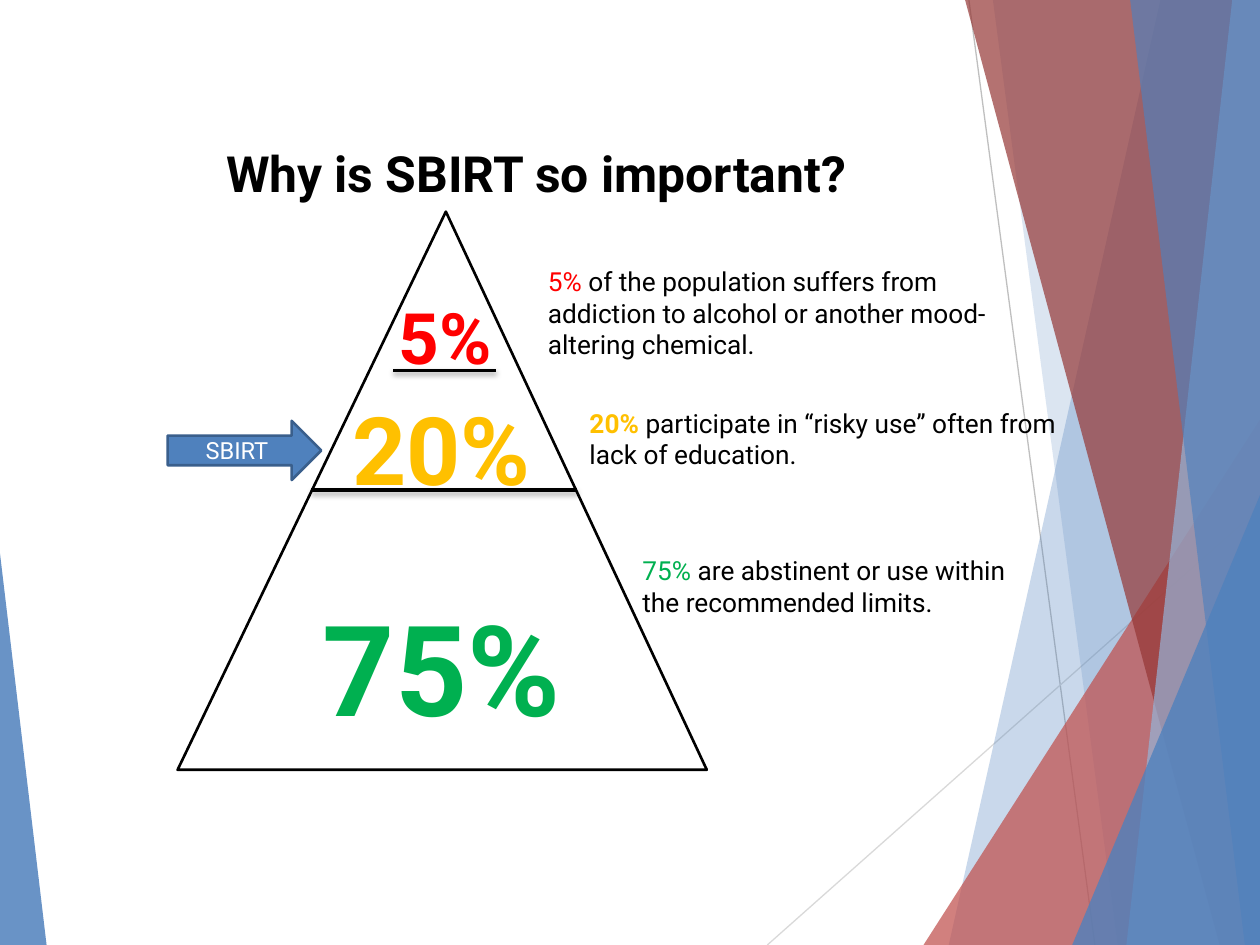
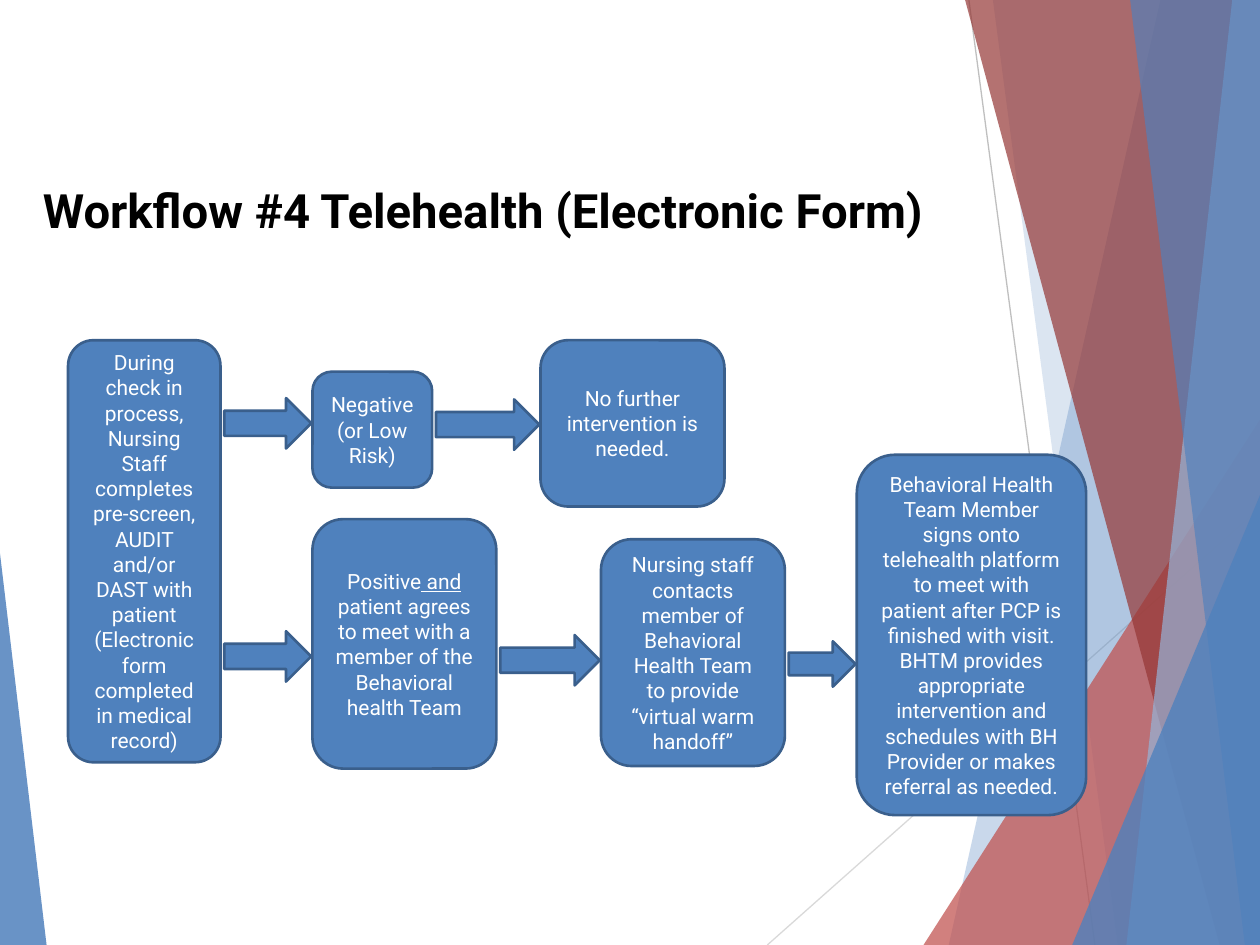
from lxml import etree
from pptx import Presentation
from pptx import util as u
from pptx.dml.color import RGBColor
from pptx.enum import shapes, text
from pptx.oxml import parse_xml
from pptx.oxml.ns import nsdecls, qn

FONT = "Roboto"
BLUE, EDGE, WHITE, BLACK = "4F81BD", "3A5F8C", "FFFFFF", "000000"
RED, GOLD, GREEN = "FF0000", "FFC000", "00B050"
WIDE, HIGH = 10, 7.5

RAYS = [((7.69, 0), (8.69, HIGH), "BFBFBF"), ((WIDE, 4.03), (6.09, HIGH), "D9D9D9")]
# Bands run from a top x to a foot x; wedges are (box, peak).
BANDS = [
    ("band", (9.21, 7.53), BLUE, 30),
    ("band", (7.88, 8.87), BLUE, 20),
    ("wedge", (7.33, 3.33, 2.67, 4.17, 1), "C0504D", 72),
    ("band", (7.66, 9.68), "953735", 70),
    ("band", (9.78, 8.94), "95B3D7", 70),
    ("band", (8.97, 9.88), BLUE, 65),
    ("wedge", (8.51, 3.93, 1.49, 3.57, 1), BLUE, 80),
    ("wedge", (0, 4.39, 0.37, 3.11, 0), BLUE, 85),
]

WHY = ("Why is SBIRT so important?", (0.97, 1.08, 6.57, 0.58), 28.5, "CENTER")
FLOW = ("Workflow #4 Telehealth (Electronic Form)", (0.24, 1.4, 7.68, 0.52), 27, "LEFT")

RULES = [(2.47, 4.58, 3.89), (3.12, 3.94, 2.94)]
SHARES = [
    ("5%", (2.94, 2.29, 1.19, 0.76), 40.5, RED),
    ("20%", (2.47, 3.06, 2.07, 0.98), 54, GOLD),
    ("75%", (2.38, 4.65, 2.25, 1.29), 72, GREEN),
]
NOTES = [
    ((4.25, 2.06, 3.87, 0.86), "5% ", RED, False,
     "of the population suffers from addiction to alcohol or another mood-altering chemical."),
    ((4.58, 3.18, 4.05, 0.61), "20% ", GOLD, True,
     "participate in “risky use” often from lack of education."),
    ((5, 4.35, 3.31, 0.61), "75% ", GREEN, False,
     "are abstinent or use within the recommended limits."),
]

STEPS = {
    "screen": ((0.54, 2.7, 1.21, 3.35), [
        "During check in process, Nursing Staff completes pre-screen, AUDIT and/or DAST "
        "with patient (Electronic form completed in medical record)"]),
    "low": ((2.48, 2.95, 0.95, 0.92), ["Negative (or Low Risk)"]),
    "done": ((4.29, 2.7, 1.46, 1.32), ["No further intervention is needed."]),
    "agree": ((2.48, 4.12, 1.46, 1.98), [
        "Positive", " and",
        " patient agrees to meet with a member of the Behavioral health Team"]),
    "call": ((4.77, 4.28, 1.46, 1.8), [
        "Nursing staff contacts member of Behavioral Health Team to provide "
        "“virtual warm handoff”"]),
    "meet": ((6.8, 3.61, 1.82, 2.86), [
        "Behavioral Health Team Member signs onto telehealth platform to meet with patient "
        "after PCP is finished with visit. BHTM provides appropriate intervention and "
        "schedules with BH Provider or makes referral as needed."]),
}
LINKS = [
    ("screen", "low", 3.36, 0.4), ("low", "done", 3.37, 0.4),
    ("screen", "agree", 5.21, 0.4), ("agree", "call", 5.24, 0.4),
    ("call", "meet", 5.27, 0.36),
]


def rgb(code):
    """Turn a hex string into a colour."""
    return RGBColor.from_string(code)


def inches(box):
    """Turn plain numbers into lengths."""
    return [u.Inches(n) for n in box]


def paint(shape, fill, edge=None, alpha=None):
    """Set the fill, outline and opacity of a shape."""
    shape.shadow.inherit = False
    shape.fill.solid()
    shape.fill.fore_color.rgb = rgb(fill)
    if alpha:
        tone = shape.element.spPr.find(".//" + qn("a:srgbClr"))
        etree.SubElement(tone, qn("a:alpha")).set("val", str(alpha * 1000))
    if edge:
        shape.line.color.rgb = rgb(edge)
        shape.line.width = u.Pt(1.5)
    else:
        shape.line.fill.background()


def form(pool, kind, box, fill, edge=None, alpha=None):
    """Add a painted preset shape."""
    shape = pool.add_shape(getattr(shapes.MSO_SHAPE, kind), *inches(box))
    paint(shape, fill, edge, alpha)
    return shape


def line(pool, start, end, tone, width, shade=False):
    """Add a straight line, with a soft shadow if asked."""
    rule = pool.add_connector(shapes.MSO_CONNECTOR.STRAIGHT, *inches(start + end))
    rule.line.color.rgb = rgb(tone)
    rule.line.width = u.Pt(width)
    glow = ('<a:outerShdw blurRad="38100" dist="25400" dir="5400000" rotWithShape="0">'
            '<a:srgbClr val="000000"><a:alpha val="35000"/></a:srgbClr></a:outerShdw>')
    rule.element.spPr.append(parse_xml(
        f'<a:effectLst {nsdecls("a")}>{glow if shade else ""}</a:effectLst>'))


def write(shape, runs, size, align="CENTER", anchor="MIDDLE"):
    """Write one paragraph of (words, colour, bold, underline) runs."""
    frame = shape.text_frame
    frame.word_wrap = True
    frame.auto_size = text.MSO_AUTO_SIZE.NONE
    frame.vertical_anchor = getattr(text.MSO_ANCHOR, anchor)
    para = frame.paragraphs[0]
    para.alignment = getattr(text.PP_ALIGN, align)
    for words, tone, bold, under in runs:
        run = para.add_run()
        run.text = words
        font = run.font
        font.name, font.size = FONT, u.Pt(size)
        font.bold, font.underline = bold, under
        font.color.rgb = rgb(tone)


def label(slide, box, runs, size, align, pad=(0.1, 0.05)):
    """Add a text box."""
    area = slide.shapes.add_textbox(*inches(box))
    frame = area.text_frame
    frame.margin_left = frame.margin_right = u.Inches(pad[0])
    frame.margin_top = frame.margin_bottom = u.Inches(pad[1])
    write(area, runs, size, align, "TOP")


def start(deck, layout, head):
    """Add a slide with its title."""
    words, box, size, align = head
    slide = deck.slides.add_slide(layout)
    title = slide.shapes.title
    title.left, title.top, title.width, title.height = inches(box)
    write(title, [(words, BLACK, True, False)], size, align)
    return slide


def adorn(slide, layout):
    """Draw the facets once and move them to the shared layout."""
    group = slide.shapes.add_group_shape()
    pool = group.shapes
    for begin, end, tone in RAYS:
        line(pool, begin, end, tone, 0.75)
    for kind, place, tone, alpha in BANDS:
        if kind == "wedge":
            wedge = form(pool, "ISOSCELES_TRIANGLE", place[:4], tone, alpha=alpha)
            wedge.adjustments[0] = place[4]
        else:
            top, foot = place
            path = pool.build_freeform(u.Inches(top), 0)
            path.add_line_segments(
                [inches(spot) for spot in ((WIDE, 0), (WIDE, HIGH), (foot, HIGH))])
            paint(path.convert_to_shape(), tone, alpha=alpha)
    for code, node in enumerate(group.element.iter(qn("p:cNvPr")), 100):
        node.set("id", str(code))
    layout.shapes.element.insert(2, group.element)


def why(slide):
    """Draw the pyramid of shares and its notes."""
    cone = form(slide.shapes, "ISOSCELES_TRIANGLE", (1.41, 1.68, 4.2, 4.43), WHITE, BLACK)
    cone.adjustments[0] = 0.507
    for left, right, top in RULES:
        line(slide.shapes, (left, top), (right, top), BLACK, 2, True)
    for words, box, size, tone in SHARES:
        label(slide, box, [(words, tone, True, False)], size, "CENTER", (0.07, 0.04))
    for box, share, tone, bold, words in NOTES:
        label(slide, box, [(share, tone, bold, False), (words, BLACK, False, False)],
              15, "LEFT")
    arrow = form(slide.shapes, "RIGHT_ARROW", (1.33, 3.34, 1.22, 0.47), BLUE, EDGE)
    write(arrow, [("SBIRT", WHITE, False, False)], 13.5)


def flow(slide):
    """Draw the steps and the arrows in the gaps between them."""
    for box, parts in STEPS.values():
        step = form(slide.shapes, "ROUNDED_RECTANGLE", box, BLUE, EDGE)
        write(step, [(part, WHITE, False, part == " and") for part in parts], 12)
    for first, then, mid, tall in LINKS:
        box = STEPS[first][0]
        left = box[0] + box[2] + 0.03
        right = STEPS[then][0][0] - 0.01
        form(slide.shapes, "RIGHT_ARROW", (left, mid - tall / 2, right - left, tall),
             BLUE, EDGE)


def main():
    """Build and save the deck."""
    deck = Presentation()
    deck.slide_width, deck.slide_height = inches((WIDE, HIGH))
    layout = deck.slide_layouts[5]
    first = start(deck, layout, WHY)
    adorn(first, layout)
    why(first)
    flow(start(deck, layout, FLOW))
    deck.save("out.pptx")


if __name__ == "__main__":
    main()
